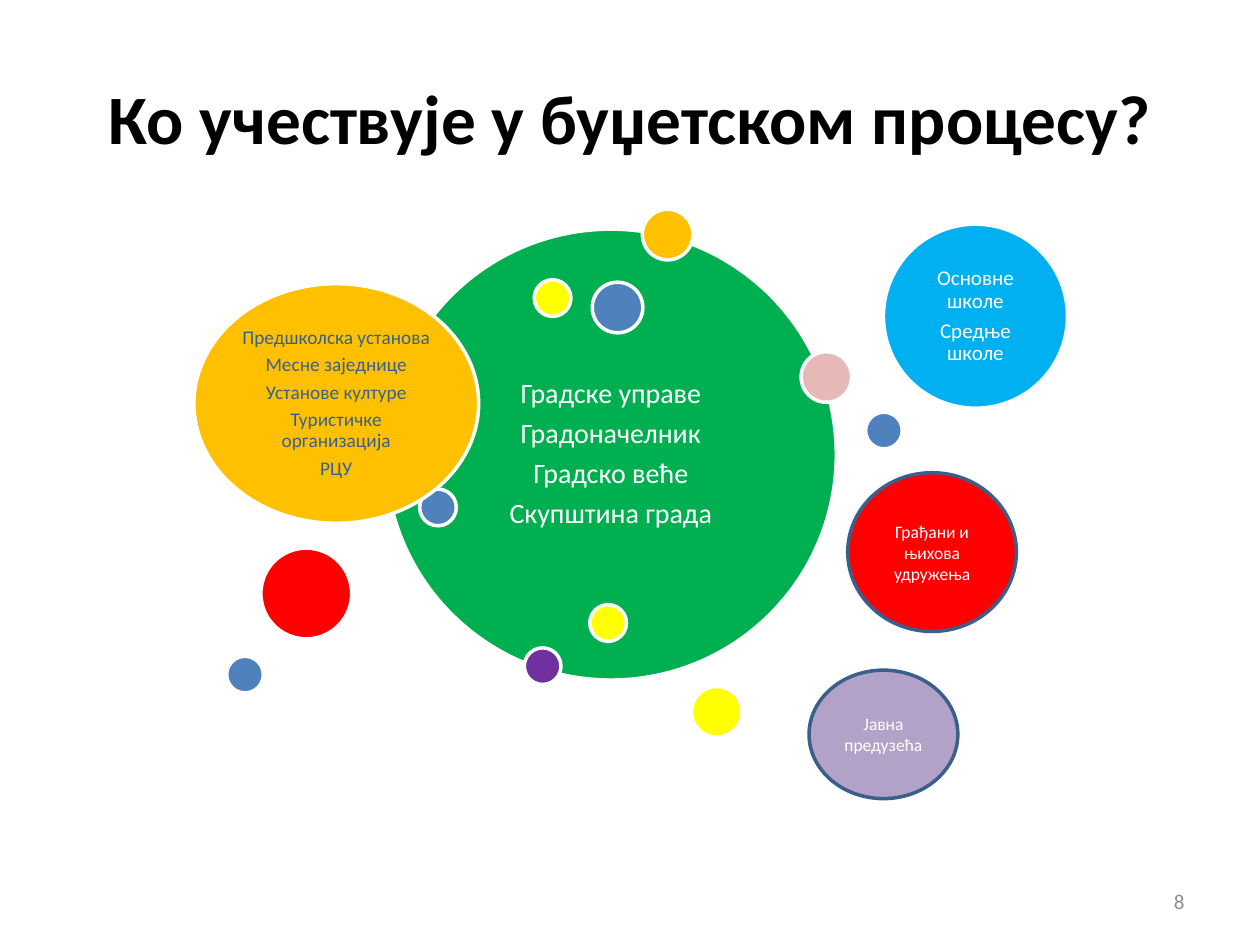
from pptx import Presentation, util as u
from pptx.dml.color import RGBColor
from pptx.enum import shapes, text

COLORS = {
    "black": "000000", "white": "FFFFFF", "gray": "8C8C8C",
    "green": "00B050", "orange": "FFC000", "purple": "7030A0",
    "blue": "4F81BD", "yellow": "FFFF00", "red": "FF0000",
    "sky": "00B0F0", "pink": "E6B9B8", "lilac": "B3A2C7",
    "navy": "376092", "outline": "3A5F8C",
}
SMALL, MEDIUM, LARGE = 0.74, 1.02, 1.83  # dot diameters in cm


class SlideBuilder:
    font = "Calibri"
    line_width = u.Pt(2)

    def __init__(self, slide):
        self.slide = slide

    def color(self, name):
        return RGBColor.from_string(COLORS[name])

    def add_lines(self, shape, lines, size, color, align=text.PP_ALIGN.CENTER,
                  bold=False, inset=None, stacked=False):
        frame = shape.text_frame
        frame.word_wrap = True
        frame.vertical_anchor = text.MSO_ANCHOR.MIDDLE
        if inset is not None:
            frame.margin_left = frame.margin_right = u.Cm(inset)
            frame.margin_top = frame.margin_bottom = u.Cm(inset)
        for index, line in enumerate(lines):
            paragraph = frame.add_paragraph() if index else frame.paragraphs[0]
            paragraph.alignment = align
            if stacked:
                paragraph.line_spacing = 0.9
                paragraph.space_after = u.Pt(round(size * 0.35, 1))
            run = paragraph.add_run()
            run.text = line
            run.font.name = self.font
            run.font.size = u.Pt(size)
            run.font.bold = bold
            run.font.color.rgb = self.color(color)

    def label(self, left, top, width, height, line, size, color, **style):
        box = self.slide.shapes.add_textbox(
            u.Cm(left), u.Cm(top), u.Cm(width), u.Cm(height))
        self.add_lines(box, [line], size, color, **style)

    def ellipse(self, left, top, width, height, fill, line="white"):
        shape = self.slide.shapes.add_shape(
            shapes.MSO_SHAPE.OVAL,
            u.Cm(left), u.Cm(top), u.Cm(width), u.Cm(height))
        shape.shadow.inherit = False
        shape.fill.solid()
        shape.fill.fore_color.rgb = self.color(fill)
        shape.line.color.rgb = self.color(line)
        shape.line.width = self.line_width
        return shape

    def dots(self, dots):
        for left, top, diameter, fill in dots:
            self.ellipse(left, top, diameter, diameter, fill)


def main():
    presentation = Presentation()
    presentation.slide_width = u.Cm(25.4)
    presentation.slide_height = u.Cm(19.05)
    slide = presentation.slides.add_slide(presentation.slide_layouts[6])
    builder = SlideBuilder(slide)

    # Title and slide number
    builder.label(1.27, 0.76, 22.86, 3.18, "Ко учествује у буџетском процесу?",
                  39.6, "black", bold=True)
    builder.label(18.21, 17.65, 5.92, 1.02, "8", 12, "gray",
                  align=text.PP_ALIGN.RIGHT)

    # City authorities in the centre
    authorities = builder.ellipse(7.77, 4.62, 9.09, 9.09, "green")
    builder.add_lines(authorities,
                      ["Градске управе", "Градоначелник", "Градско веће",
                       "Скупштина града"],
                      16, "white", inset=0.18, stacked=True)

    # Dots behind the institutions
    builder.dots([
        (12.95, 4.22, MEDIUM, "orange"),
        (10.57, 13.06, SMALL, "purple"),
        (17.45, 8.31, SMALL, "blue"),
        (13.94, 13.84, MEDIUM, "yellow"),
        (10.77, 5.64, SMALL, "yellow"),
        (8.46, 9.86, SMALL, "blue"),
    ])

    # Institutions and schools
    institutions = builder.ellipse(3.91, 5.72, 5.74, 4.83, "orange")
    builder.add_lines(institutions,
                      ["Предшколска установа", "Месне заједнице",
                       "Установе културе", "Туристичке организација", "РЦУ"],
                      11, "navy", inset=0.13, stacked=True)
    schools = builder.ellipse(17.81, 4.52, 3.71, 3.71, "sky")
    builder.add_lines(schools, ["Основне школе", "Средње школе"],
                      12, "white", inset=0.13, stacked=True)

    # Dots in front
    builder.dots([
        (11.94, 5.69, MEDIUM, "blue"),
        (5.26, 11.05, LARGE, "red"),
        (16.15, 7.09, MEDIUM, "pink"),
        (4.57, 13.23, SMALL, "blue"),
        (11.89, 12.19, SMALL, "yellow"),
    ])

    # Citizens and public companies
    citizens = builder.ellipse(17.09, 9.53, 3.4, 3.2, "red", "outline")
    builder.add_lines(citizens, ["Грађани и њихова удружења"], 10, "white")
    companies = builder.ellipse(16.31, 13.51, 3, 2.59, "lilac", "outline")
    builder.add_lines(companies, ["Јавна предузећа"], 10, "white")

    presentation.save("out.pptx")


if __name__ == "__main__":
    main()
